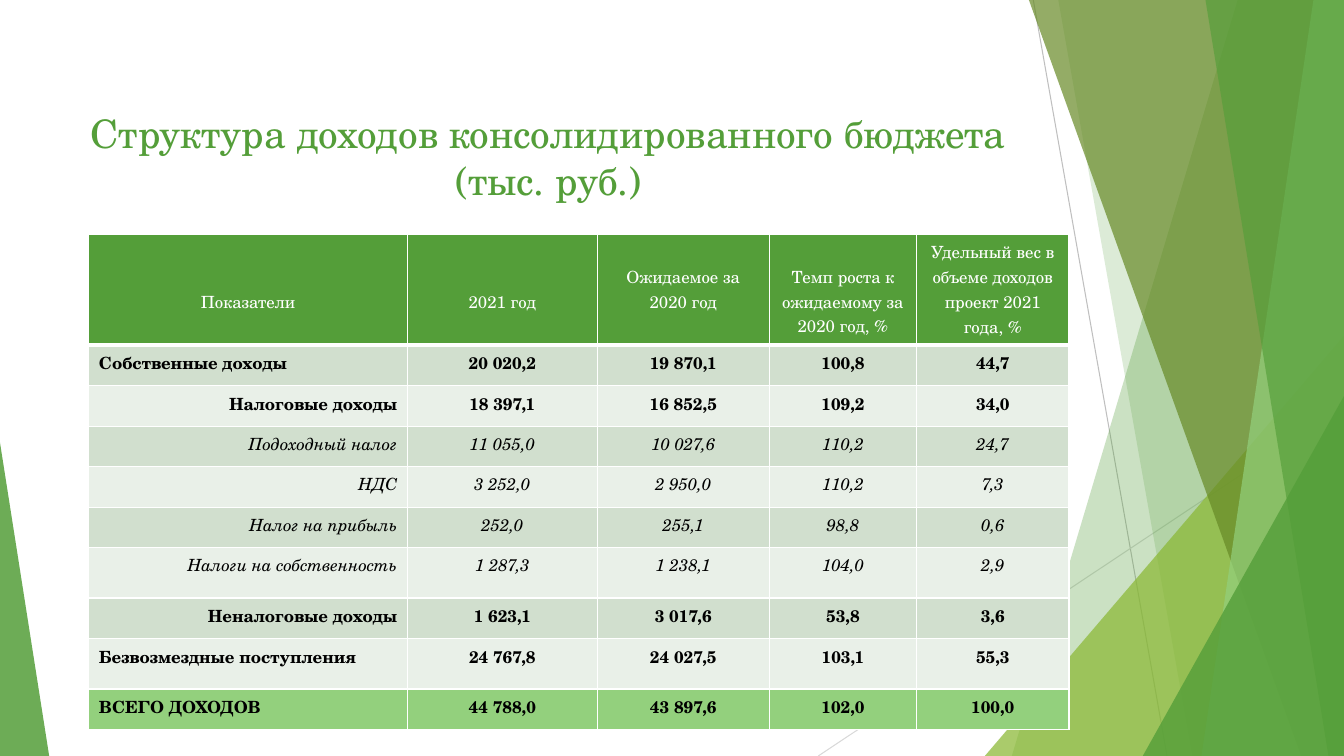
"""Build the slide on the structure of consolidated budget revenue."""
from dataclasses import dataclass

from lxml.etree import SubElement
from pptx import Presentation
from pptx.dml.color import RGBColor
from pptx.enum.shapes import MSO_CONNECTOR, MSO_SHAPE
from pptx.enum.text import MSO_ANCHOR, PP_ALIGN
from pptx.oxml.ns import qn
from pptx.util import Cm, Pt


@dataclass(frozen=True)
class Theme:
    font: str = "TeX Gyre Schola"
    title_size: int = 28
    table_size: int = 12
    line_pitch: float = 17.6
    green: str = "549E39"
    lime: str = "8AB833"
    olive: str = "678A26"
    light_green: str = "93D07D"
    band_dark: str = "D1DFCE"
    band_light: str = "E9F0E8"
    white: str = "FFFFFF"
    black: str = "000000"
    line_dark: str = "BFBFBF"
    line_light: str = "D9D9D9"


T = Theme()
W, H = 33.87, 19.05

TITLE = "Структура доходов консолидированного бюджета (тыс. руб.)"
TITLE_BOX = (1.88, 2.54, 23.88, 2.82)

# (text, lines left free above it)
HEADERS = [
    ("Показатели", 2),
    ("2021 год", 2),
    ("Ожидаемое за 2020 год", 1),
    ("Темп роста к ожидаемому за 2020 год, %", 1),
    ("Удельный вес в объеме доходов проект 2021 года, %", 0),
]
TOTAL, GROUP, ITEM = "total", "group", "item"
ROWS = [
    (TOTAL, "Собственные доходы", "20 020,2", "19 870,1", "100,8", "44,7"),
    (GROUP, "Налоговые доходы", "18 397,1", "16 852,5", "109,2", "34,0"),
    (ITEM, "Подоходный налог", "11 055,0", "10 027,6", "110,2", "24,7"),
    (ITEM, "НДС", "3 252,0", "2 950,0", "110,2", "7,3"),
    (ITEM, "Налог на прибыль", "252,0", "255,1", "98,8", "0,6"),
    (ITEM, "Налоги на собственность", "1 287,3", "1 238,1", "104,0", "2,9"),
    (GROUP, "Неналоговые доходы", "1 623,1", "3 017,6", "53,8", "3,6"),
    (TOTAL, "Безвозмездные поступления", "24 767,8", "24 027,5", "103,1", "55,3"),
    (TOTAL, "ВСЕГО ДОХОДОВ", "44 788,0", "43 897,6", "102,0", "100,0"),
]
TABLE_AT = (2.24, 5.91)
COL_WIDTHS = [8.03, 4.78, 4.34, 3.71, 3.84]
HEADER_HEIGHT, ROW_HEIGHT, TALL_HEIGHT = 2.79, 1.02, 1.27
TALL_ROWS = {6, 8}

RAYS = [
    ((26.04, 0), (29.41, H), T.line_dark),
    ((W, 10.24), (20.62, H), T.line_light),
]
RIBBON, TRIANGLE = "ribbon", "triangle"
FACETS = [
    (RIBBON, (31.19, 25.5), T.green, 30),
    (RIBBON, (26.67, 30.05), T.green, 20),
    (TRIANGLE, (24.82, 8.46, 9.05, 1), T.lime, 72),
    (RIBBON, (25.93, 32.79), T.olive, 70),
    (RIBBON, (33.1, 30.28), T.light_green, 70),
    (RIBBON, (30.38, 33.48), T.green, 65),
    (TRIANGLE, (28.8, 9.98, 5.07, 1), T.green, 80),
    (TRIANGLE, (0, 11.15, 1.24, 0), T.green, 85),
]


def rgb(color):
    return RGBColor.from_string(color)


def add_ray(s, start, end, color):
    ray = s.shapes.add_connector(MSO_CONNECTOR.STRAIGHT, *map(Cm, start + end))
    ray.line.color.rgb = rgb(color)
    ray.line.width = Pt(0.75)
    SubElement(ray._element.spPr, qn("a:effectLst"))


def add_facet(s, kind, geometry, color, opacity):
    if kind == RIBBON:
        top, bottom = geometry
        fb = s.shapes.build_freeform(Cm(top), 0)
        fb.add_line_segments([(Cm(x), Cm(y)) for x, y in ((W, 0), (W, H), (bottom, H))])
        sp = fb.convert_to_shape()
    else:
        x, y, width, apex = geometry
        sp = s.shapes.add_shape(MSO_SHAPE.ISOSCELES_TRIANGLE, *map(Cm, (x, y, width, H - y)))
        sp.adjustments[0] = apex
    sp.shadow.inherit = False
    sp.line.fill.background()
    sp.fill.solid()
    sp.fill.fore_color.rgb = rgb(color)
    clr = sp._element.spPr.find(qn("a:solidFill"))[0]
    SubElement(clr, qn("a:alpha"), val=str(opacity * 1000))


def set_text(tf, text, size, color, align=PP_ALIGN.CENTER, bold=False, italic=False):
    tf.word_wrap = True
    p = tf.paragraphs[0]
    p.text = text
    p.alignment = align
    f = p.font
    f.name, f.size, f.bold, f.italic = T.font, Pt(size), bold, italic
    f.color.rgb = rgb(color)


def add_title(s):
    title = s.shapes.title
    title.left, title.top, title.width, title.height = map(Cm, TITLE_BOX)
    title.text_frame.vertical_anchor = MSO_ANCHOR.MIDDLE
    set_text(title.text_frame, TITLE, T.title_size, T.green)
    s.shapes._spTree.append(title._element)


def format_cell(cell, text, fill, color, bottom=1, **style):
    set_text(cell.text_frame, text, T.table_size, color, **style)
    cell.vertical_anchor = MSO_ANCHOR.TOP
    tcPr = cell._tc.get_or_add_tcPr()
    for side, width in (("L", 1), ("R", 1), ("T", 1), ("B", bottom)):
        ln = SubElement(tcPr, qn(f"a:ln{side}"), w=str(Pt(width)))
        SubElement(SubElement(ln, qn("a:solidFill")), qn("a:srgbClr"), val=T.white)
    cell.fill.solid()
    cell.fill.fore_color.rgb = rgb(fill)


def add_revenue_table(s):
    heights = [HEADER_HEIGHT] + [
        TALL_HEIGHT if i in TALL_ROWS else ROW_HEIGHT for i in range(1, len(ROWS) + 1)]
    size = (sum(COL_WIDTHS), sum(heights))
    table = s.shapes.add_table(len(heights), len(COL_WIDTHS), *map(Cm, TABLE_AT + size)).table
    for col, width in zip(table.columns, COL_WIDTHS):
        col.width = Cm(width)
    for row, height in zip(table.rows, heights):
        row.height = Cm(height)
    for c, (text, free_lines) in enumerate(HEADERS):
        cell = table.cell(0, c)
        format_cell(cell, text, T.green, T.white, bottom=3)
        cell.margin_top = Cm(0.13) + Pt(free_lines * T.line_pitch)
    for r, (level, *values) in enumerate(ROWS, 1):
        fill = T.light_green if r == len(ROWS) else (T.band_light, T.band_dark)[r % 2]
        label_align = PP_ALIGN.LEFT if level == TOTAL else PP_ALIGN.RIGHT
        for c, text in enumerate(values):
            format_cell(table.cell(r, c), text, fill, T.black,
                        align=PP_ALIGN.CENTER if c else label_align,
                        bold=level != ITEM, italic=level == ITEM)


def main():
    prs = Presentation()
    prs.slide_width, prs.slide_height = Cm(W), Cm(H)
    s = prs.slides.add_slide(prs.slide_layouts[5])
    for ray in RAYS:
        add_ray(s, *ray)
    for facet in FACETS:
        add_facet(s, *facet)
    add_title(s)
    add_revenue_table(s)
    prs.save("out.pptx")


if __name__ == "__main__":
    main()
